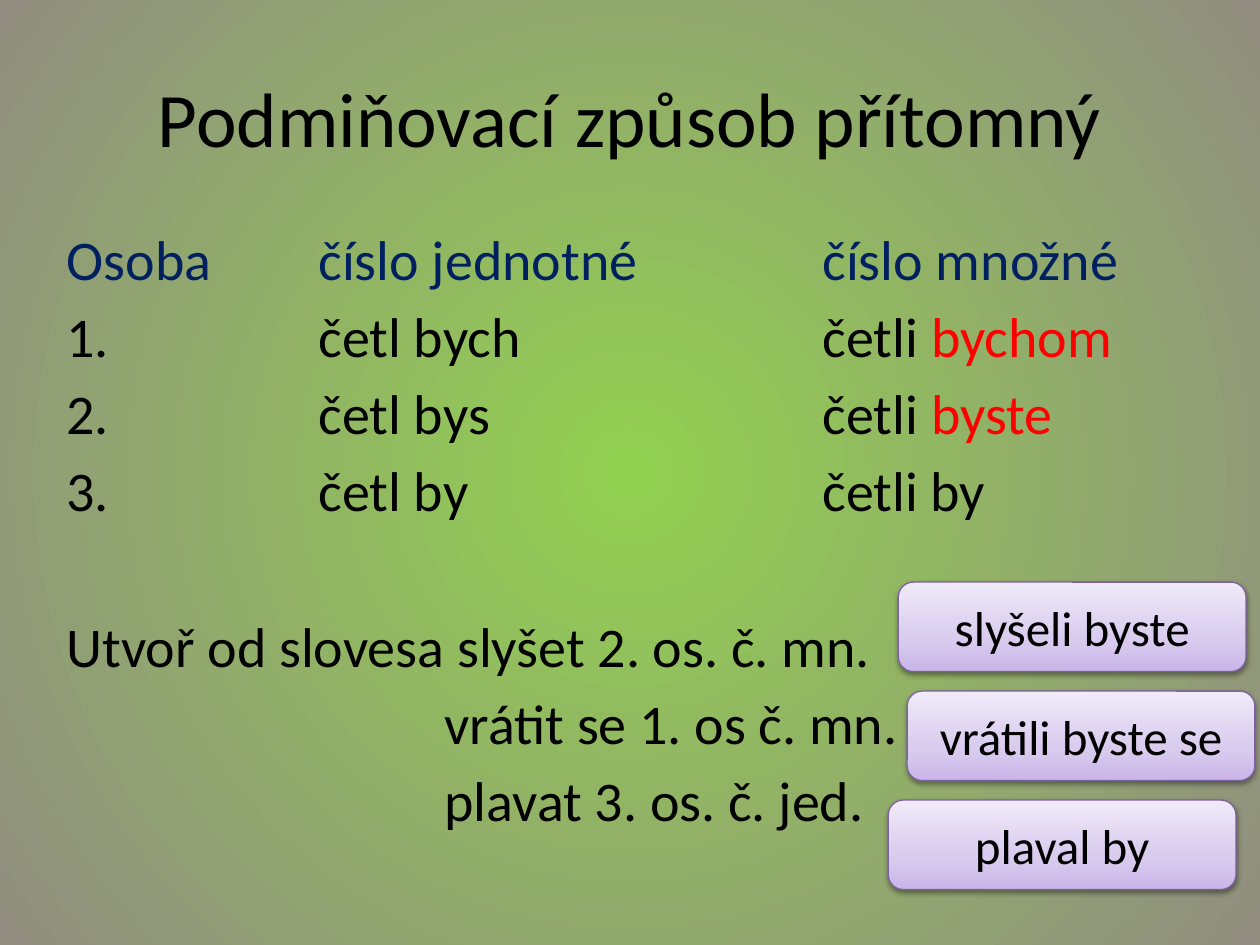
from typing import NamedTuple

from lxml.etree import SubElement as Sub
from pptx import Presentation
from pptx.dml.color import RGBColor as RGB
from pptx.enum.shapes import MSO_SHAPE as Kind
from pptx.enum.text import MSO_ANCHOR as Anchor, PP_ALIGN as Align
from pptx.oxml.ns import qn
from pptx.util import Inches, Pt

WIDE, HIGH = Inches(10), Inches(7.5)
FONT = "Calibri"
BLACK = RGB(0x00, 0x00, 0x00)
NAVY = RGB(0x00, 0x20, 0x60)
RED = RGB(0xFF, 0x00, 0x00)
EDGE = RGB(0x7D, 0x60, 0xA0)
GLOW = [(0, RGB(0x92, 0xD0, 0x50)), (100, RGB(0x91, 0x8E, 0x81))]
LILAC = [
    (0, RGB(0xC9, 0xB5, 0xE8)),
    (35, RGB(0xD8, 0xCB, 0xEE)),
    (100, RGB(0xF0, 0xEA, 0xF9)),
]
GAP, BREAK = Pt(5.7), Pt(50.4)


class Line(NamedTuple):
    text: str
    mark: str = ""
    color: RGB = BLACK
    gap: int = GAP


class Card(NamedTuple):
    text: str
    left: float
    row: int


LINES = [
    Line("Osoba\tčíslo jednotné\t\tčíslo množné", color=NAVY),
    Line("1. \t\tčetl bych\t\t\tčetli ", "bychom"),
    Line("2. \t\tčetl bys\t\t\tčetli ", "byste"),
    Line("3. \t\tčetl by\t\t\tčetli by"),
    Line("Utvoř od slovesa slyšet 2. os. č. mn.", gap=BREAK),
    Line("\t\t\tvrátit se 1. os č. mn."),
    Line("\t\t\tplavat 3. os. č. jed."),
]
CARDS = [
    Card("slyšeli byste", 0.713, 0),
    Card("vrátili byste se", 0.72, 1),
    Card("plaval by", 0.705, 2),
]


def style(run, size: int, color: RGB) -> None:
    run.font.name = FONT
    run.font.size = Pt(size)
    run.font.color.rgb = color


def blend(fill, root, stops: list, round_: bool = False) -> None:
    fill.gradient()
    grad = next(root.iter(qn("a:gradFill")))
    for part in list(grad):
        grad.remove(part)
    steps = Sub(grad, qn("a:gsLst"))
    for pos, color in stops:
        stop = Sub(steps, qn("a:gs"), pos=str(pos * 1000))
        Sub(stop, qn("a:srgbClr"), val=str(color))
    if round_:
        way = Sub(grad, qn("a:path"), path="circle")
        Sub(way, qn("a:fillToRect"), dict.fromkeys("ltrb", "50000"))
    else:
        Sub(grad, qn("a:lin"), ang="16200000", scaled="0")


def shade(shape) -> None:
    shape.shadow.inherit = False
    effects = shape._element.spPr.find(qn("a:effectLst"))
    shadow = Sub(effects, qn("a:outerShdw"), blurRad=str(Pt(3.1)),
                 dist=str(Pt(1.6)), dir="5400000", rotWithShape="0")
    color = Sub(shadow, qn("a:srgbClr"), val=str(BLACK))
    Sub(color, qn("a:alpha"), val="38000")


def add_title(slide, text: str) -> None:
    title = slide.shapes.title
    title.left, title.top = int(WIDE * 0.05), int(HIGH * 0.04)
    title.width, title.height = int(WIDE * 0.9), HIGH // 6
    frame = title.text_frame
    frame.text = text
    frame.vertical_anchor = Anchor.MIDDLE
    para = frame.paragraphs[0]
    para.alignment = Align.CENTER
    style(para.runs[0], 44, BLACK)


def add_body(slide, lines: list) -> None:
    box = slide.shapes.add_textbox(
        Inches(0.43), Inches(1.73), int(WIDE * 0.9), Inches(5.35))
    frame = box.text_frame
    frame.word_wrap = True
    for i, line in enumerate(lines):
        para = frame.add_paragraph() if i else frame.paragraphs[0]
        para.text = line.text
        para.space_before = line.gap
        style(para.runs[0], 32, line.color)
        if line.mark:
            run = para.add_run()
            run.text = line.mark
            style(run, 32, RED)
        tabs = Sub(para._p.get_or_add_pPr(), qn("a:tabLst"))
        for col in range(1, 9):
            Sub(tabs, qn("a:tab"), pos=str(Inches(col)), algn="l")


def add_card(slide, card: Card) -> None:
    top = Inches(4.62 + card.row * 0.865)
    shape = slide.shapes.add_shape(
        Kind.ROUNDED_RECTANGLE, int(WIDE * card.left), top,
        int(WIDE * 0.276), Inches(0.71))
    blend(shape.fill, shape._element, LILAC)
    shape.line.color.rgb = EDGE
    shape.line.width = Pt(0.75)
    shade(shape)
    frame = shape.text_frame
    frame.text = card.text
    frame.vertical_anchor = Anchor.MIDDLE
    para = frame.paragraphs[0]
    para.alignment = Align.CENTER
    style(para.runs[0], 28, BLACK)


def main() -> None:
    deck = Presentation()
    deck.slide_width, deck.slide_height = WIDE, HIGH
    slide = deck.slides.add_slide(deck.slide_layouts[5])
    blend(slide.background.fill, slide._element, GLOW, True)
    add_title(slide, "Podmiňovací způsob přítomný")
    add_body(slide, LINES)
    for card in CARDS:
        add_card(slide, card)
    deck.save("out.pptx")


if __name__ == "__main__":
    main()
